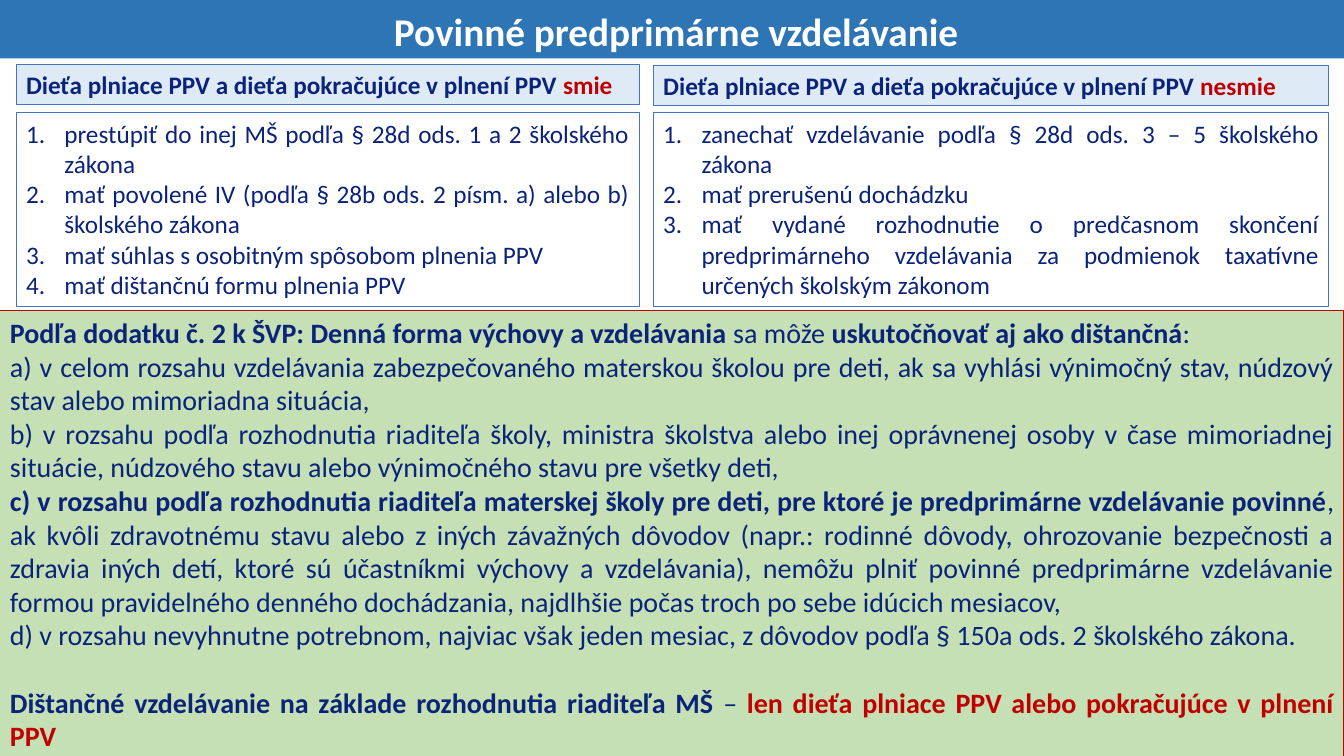
from lxml import etree
from pptx import Presentation
from pptx.dml.color import RGBColor
from pptx.enum.shapes import MSO_SHAPE
from pptx.enum.text import MSO_ANCHOR, PP_ALIGN
from pptx.oxml.ns import qn
from pptx.util import Inches, Pt

RECT = MSO_SHAPE.RECTANGLE
TOP, MIDDLE = MSO_ANCHOR.TOP, MSO_ANCHOR.MIDDLE
LEFT, CENTER, JUSTIFY = PP_ALIGN.LEFT, PP_ALIGN.CENTER, PP_ALIGN.JUSTIFY
FONT = "Calibri"
COLORS = {
    "banner": "2E75B6",
    "white": "FFFFFF",
    "navy": "0B2379",
    "red": "C00000",
    "blue_line": "4472C4",
    "pale_blue": "DEEBF7",
    "green": "C5E0B4",
}

HEADING = "Dieťa plniace PPV a dieťa pokračujúce v plnení PPV "
# left, width, heading top, heading alignment, highlighted word, list items
COLUMNS = [
    (0.16, 6.18, 0.64, LEFT, "smie", [
        "prestúpiť do inej MŠ podľa § 28d ods. 1 a 2 školského zákona",
        "mať povolené IV (podľa § 28b ods. 2 písm. a) alebo b) školského zákona",
        "mať súhlas s osobitným spôsobom plnenia PPV",
        "mať dištančnú formu plnenia PPV",
    ]),
    (6.48, 6.7, 0.65, JUSTIFY, "nesmie", [
        "zanechať vzdelávanie podľa § 28d ods. 3 – 5 školského zákona",
        "mať prerušenú dochádzku",
        "mať vydané rozhodnutie o predčasnom skončení predprimárneho "
        "vzdelávania za podmienok taxatívne určených školským zákonom",
    ]),
]

# Each paragraph is a list of runs: text, bold, colour
DISTANCE_RULES = [
    [("Podľa dodatku č. 2 k ŠVP: Denná forma výchovy a vzdelávania ", True, "navy"),
     ("sa môže ", False, "navy"),
     ("uskutočňovať aj ako dištančná", True, "navy"),
     (":", False, "navy")],
    [("a) v celom rozsahu vzdelávania zabezpečovaného materskou školou pre deti, "
      "ak sa vyhlási výnimočný stav, núdzový stav alebo mimoriadna situácia,",
      False, "navy")],
    [("b) v rozsahu podľa rozhodnutia riaditeľa školy, ministra školstva alebo inej "
      "oprávnenej osoby v čase mimoriadnej situácie, núdzového stavu alebo "
      "výnimočného stavu pre všetky deti,", False, "navy")],
    [("c) v rozsahu podľa rozhodnutia riaditeľa materskej školy pre deti, "
      "pre ktoré je predprimárne vzdelávanie povinné", True, "navy"),
     (", ak kvôli zdravotnému stavu alebo z iných závažných dôvodov (napr.: rodinné "
      "dôvody, ohrozovanie bezpečnosti a zdravia iných detí, ktoré sú účastníkmi "
      "výchovy a vzdelávania), nemôžu plniť povinné predprimárne vzdelávanie formou "
      "pravidelného denného dochádzania, najdlhšie počas troch po sebe idúcich "
      "mesiacov,", False, "navy")],
    [("d) v rozsahu nevyhnutne potrebnom, najviac však jeden mesiac, "
      "z dôvodov podľa § 150a ods. 2 školského zákona.", False, "navy")],
    [("Dištančné vzdelávanie na základe rozhodnutia riaditeľa MŠ ", True, "navy"),
     ("– ", False, "navy"),
     ("len dieťa plniace PPV alebo pokračujúce v plnení PPV", True, "red")],
]


def rgb(name):
    return RGBColor.from_string(COLORS[name])


def add_box(s, left, top, width, height, fill=None, line=None, anchor=TOP):
    sp = s.shapes.add_shape(RECT, Inches(left), Inches(top), Inches(width), Inches(height))
    sp.shadow.inherit = False
    if fill:
        sp.fill.solid()
        sp.fill.fore_color.rgb = rgb(fill)
    else:
        sp.fill.background()
    if line:
        sp.line.color.rgb = rgb(line)
        sp.line.width = Pt(0.75)
    else:
        sp.line.fill.background()
    tf = sp.text_frame
    tf.word_wrap = True
    tf.vertical_anchor = anchor
    return tf


def write(tf, paragraphs, size, align):
    """Fill the frame with paragraphs, each a list of (text, bold, colour) runs."""
    for i, runs in enumerate(paragraphs):
        p = tf.add_paragraph() if i else tf.paragraphs[0]
        p.alignment = align
        for text, bold, color in runs:
            r = p.add_run()
            r.text = text
            r.font.name = FONT
            r.font.size = Pt(size)
            r.font.bold = bold
            r.font.color.rgb = rgb(color)


def number(p):
    """Give the paragraph an automatic number with a hanging indent."""
    pPr = p._p.get_or_add_pPr()
    pPr.set("marL", str(Inches(0.38)))
    pPr.set("indent", str(-Inches(0.38)))
    etree.SubElement(pPr, qn("a:buFont"), typeface="+mj-lt")
    etree.SubElement(pPr, qn("a:buAutoNum"), type="arabicPeriod")


def add_title(s):
    tf = add_box(s, 0, 0, 13.33, 0.58, fill="banner", anchor=MIDDLE)
    tf.margin_left = Inches(0.08)
    tf.margin_top = Inches(0.04)
    tf.margin_right = tf.margin_bottom = 0
    write(tf, [[("Povinné predprimárne vzdelávanie", True, "white")]], 28, CENTER)


def add_column(s, left, width, top, align, word, items):
    tf = add_box(s, left, 1.12, width, 1.92, line="blue_line")
    write(tf, [[(item, False, "navy")] for item in items], 18, JUSTIFY)
    for p in tf.paragraphs:
        number(p)
    tf = add_box(s, left, top, width, 0.4, fill="pale_blue", line="blue_line")
    write(tf, [[(HEADING, True, "navy"), (word, True, "red")]], 18, align)


def add_distance_rules(s):
    tf = add_box(s, 0, 3.08, 13.33, 4.48, fill="green", line="red")
    write(tf, DISTANCE_RULES, 20, JUSTIFY)
    tf.paragraphs[-1].space_before = Pt(24)


def main():
    prs = Presentation()
    prs.slide_width = Inches(13.33)
    prs.slide_height = Inches(7.5)
    s = prs.slides.add_slide(prs.slide_layouts[6])
    add_title(s)
    for column in COLUMNS:
        add_column(s, *column)
    add_distance_rules(s)
    prs.save("out.pptx")


if __name__ == "__main__":
    main()
